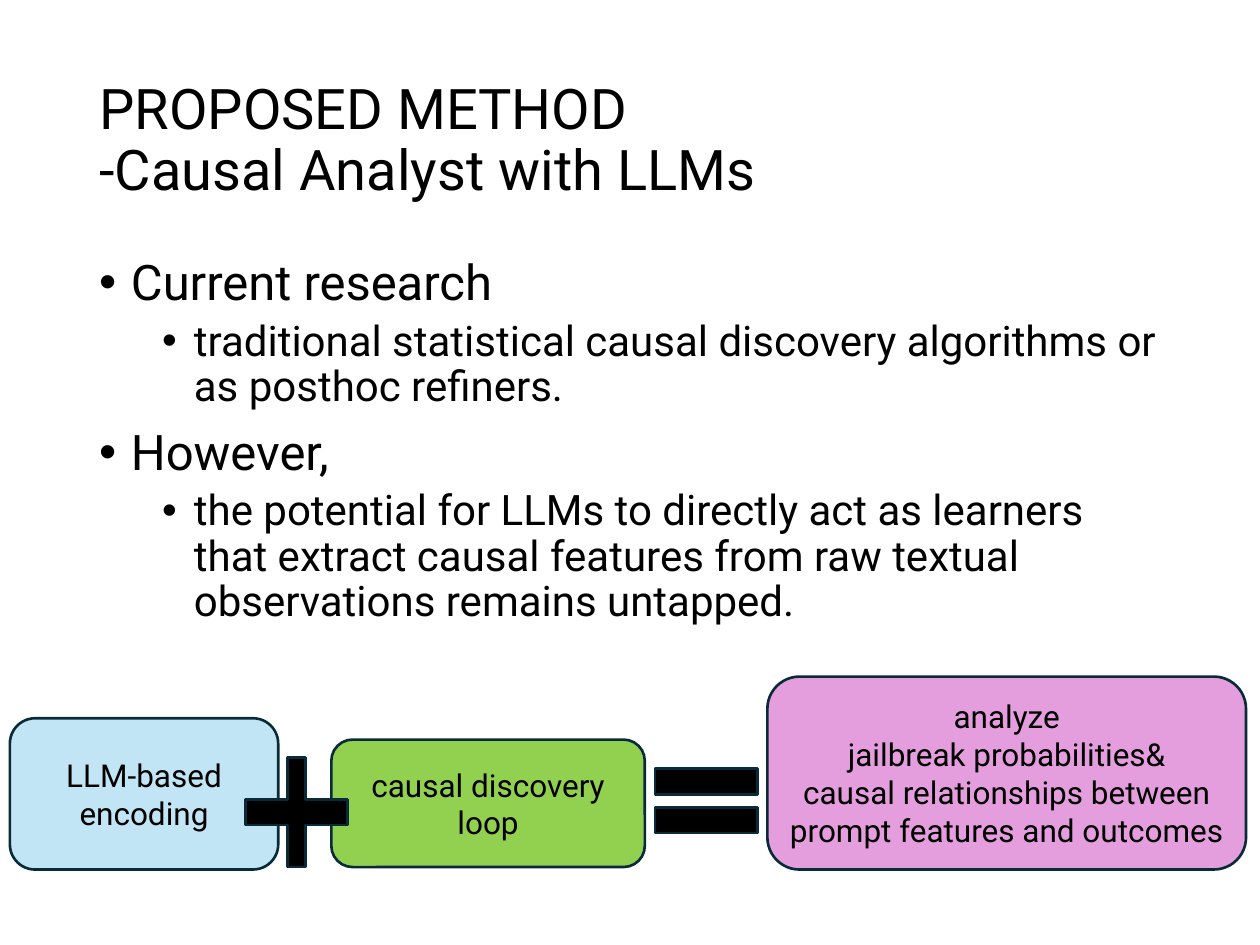
from lxml.etree import SubElement
from pptx import Presentation
from pptx.dml.color import RGBColor
from pptx.enum.shapes import MSO_SHAPE as Shape
from pptx.enum.text import MSO_ANCHOR as Anchor, MSO_AUTO_SIZE as AutoSize, PP_ALIGN as Align
from pptx.oxml.ns import qn
from pptx.util import Cm, Pt

FONT = "Roboto"
BLACK = "000000"
OUTLINE = "092A39"
TITLE_ONLY = 5

TITLE_LINES = ["PROPOSED METHOD ", "-Causal Analyst with LLMs"]
POINTS = [
    (0, "Current research"),
    (1, "traditional statistical causal discovery algorithms or as posthoc refiners."),
    (0, "However,"),
    (1, "the potential for LLMs to directly act as learners that extract causal "
        "features from raw textual observations remains untapped."),
]
# Per level: text size, space before, left margin in cm
LEVELS = [(28, 10, 0.64), (24, 5, 1.91)]
BULLET_HANG = 0.64

# Left, top, width, height in cm, then fill and text lines
STEPS = [
    ((0.2, 14.48, 5.41, 3.05), "C1E5F5", ["LLM-based encoding"]),
    ((6.68, 14.91, 6.32, 2.57), "92D050", ["causal discovery loop"]),
    ((15.47, 13.64, 9.65, 3.89), "E59EDD",
     ["analyze", "jailbreak probabilities&",
      "causal relationships between prompt features and outcomes"]),
]


def color(value):
    return RGBColor.from_string(value)


def place(box):
    return [Cm(length) for length in box]


def add_run(paragraph, text, size):
    run = paragraph.add_run()
    run.text = text
    run.font.name = FONT
    run.font.size = Pt(size)
    run.font.color.rgb = color(BLACK)


def next_paragraph(frame, index):
    return frame.add_paragraph() if index else frame.paragraphs[0]


def fill_title(title):
    title.left, title.top, title.width, title.height = place((1.75, 1.02, 21.89, 3.68))
    frame = title.text_frame
    frame.auto_size = AutoSize.NONE
    frame.vertical_anchor = Anchor.MIDDLE
    heading = frame.paragraphs[0]
    heading.alignment = Align.LEFT
    heading.line_spacing = 0.9
    for index, line in enumerate(TITLE_LINES):
        if index:
            heading.add_line_break()
        add_run(heading, line, 32)


def set_bullet(paragraph, margin):
    properties = paragraph._p.get_or_add_pPr()
    properties.set("marL", str(Cm(margin)))
    properties.set("indent", str(-Cm(BULLET_HANG)))
    SubElement(properties, qn("a:buFont"), typeface="Arial")
    SubElement(properties, qn("a:buChar"), char="•")


def add_points(slide):
    frame = slide.shapes.add_textbox(*place((1.75, 5.08, 21.89, 12.09))).text_frame
    frame.word_wrap = True
    for index, (level, text) in enumerate(POINTS):
        size, space, margin = LEVELS[level]
        point = next_paragraph(frame, index)
        point.level = level
        set_bullet(point, margin)
        point.line_spacing = 0.9
        if index:
            point.space_before = Pt(space)
        add_run(point, text, size)


def add_block(slide, preset, box, fill):
    block = slide.shapes.add_shape(preset, *place(box))
    block.shadow.inherit = False
    block.fill.solid()
    block.fill.fore_color.rgb = color(fill)
    block.line.color.rgb = color(OUTLINE)
    block.line.width = Pt(1.5)
    return block


def add_step(slide, box, fill, lines):
    frame = add_block(slide, Shape.ROUNDED_RECTANGLE, box, fill).text_frame
    frame.word_wrap = True
    frame.vertical_anchor = Anchor.MIDDLE
    for index, line in enumerate(lines):
        paragraph = next_paragraph(frame, index)
        paragraph.alignment = Align.CENTER
        add_run(paragraph, line, 18)


def main():
    deck = Presentation()
    deck.slide_width, deck.slide_height = Cm(25.4), Cm(19.05)
    slide = deck.slides.add_slide(deck.slide_layouts[TITLE_ONLY])

    # Heading and argument
    fill_title(slide.shapes.title)
    add_points(slide)

    # Equation: encoding + loop = analysis
    for step in STEPS:
        add_step(slide, *step)
    plus = add_block(slide, Shape.CROSS, (4.95, 15.27, 2.06, 2.21), BLACK)
    plus.adjustments[0] = 0.41
    add_block(slide, Shape.MATH_EQUAL, (12.83, 15.04, 2.82, 2.21), BLACK)

    deck.save("out.pptx")


if __name__ == "__main__":
    main()
